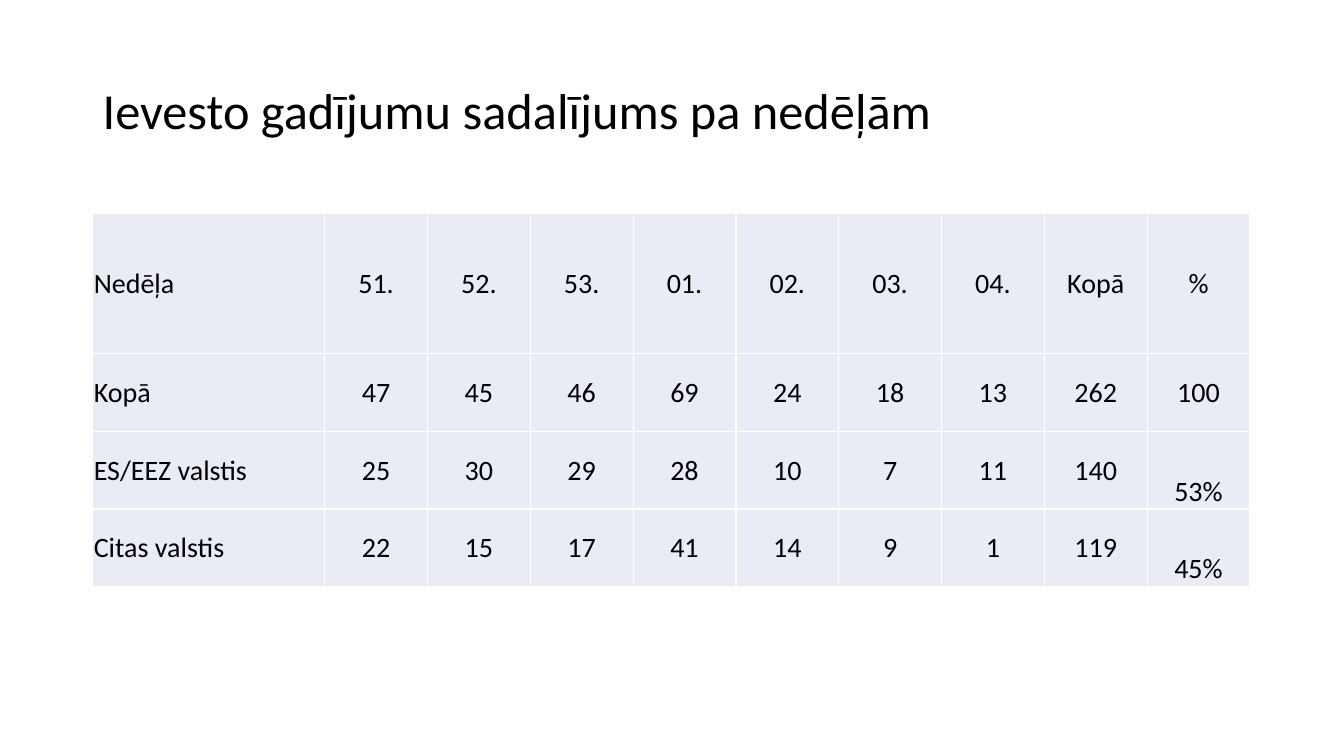
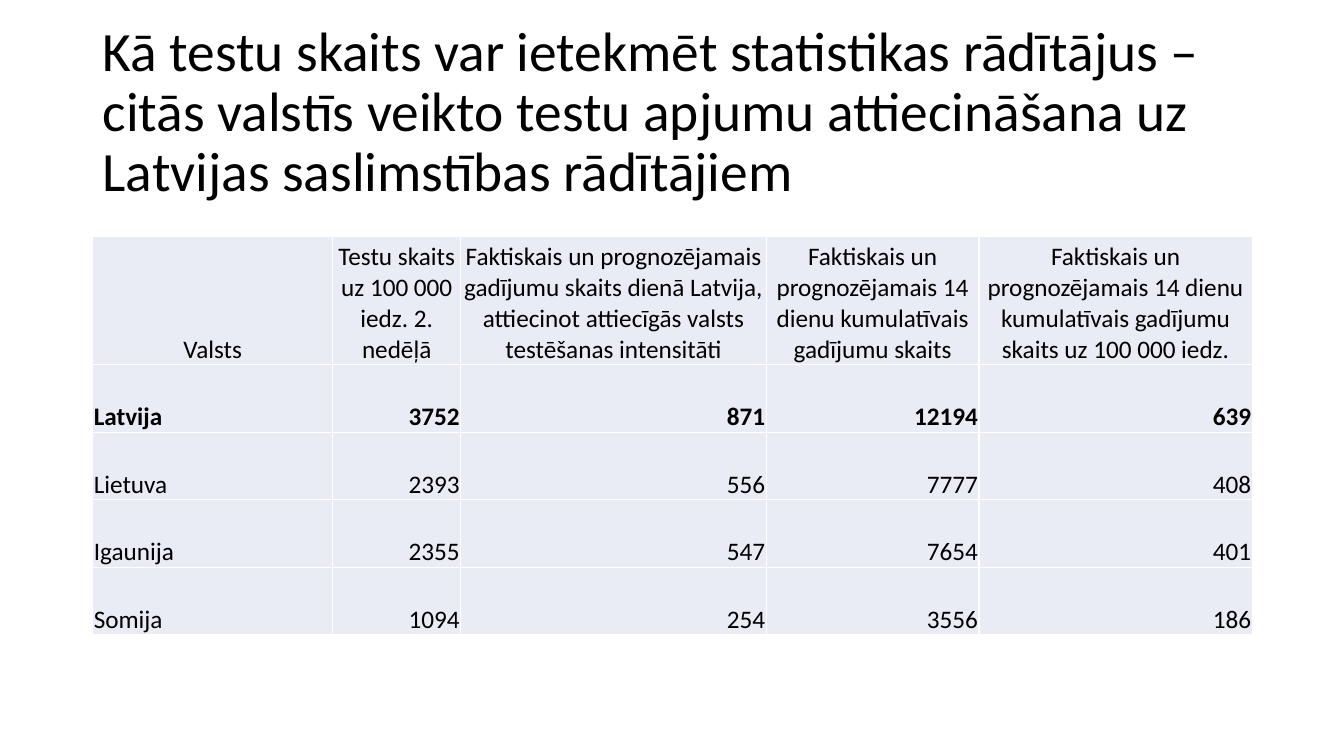
import pptx
import pptx.util
import pptx.dml.color
import pptx.enum.text
import pptx.oxml
import pptx.oxml.ns

Inches = pptx.util.Inches
Align = pptx.enum.text.PP_ALIGN
Anchor = pptx.enum.text.MSO_ANCHOR

FONT = "Calibri"
COLORS = {"text": "000000", "cell": "E9EBF5", "line": "FFFFFF"}
LEFT = 0.92


def style(para, size, bold=False):
    for run in para.runs:
        run.font.name = FONT
        run.font.size = pptx.util.Pt(size)
        run.font.bold = bold
        run.font.color.rgb = pptx.dml.color.RGBColor.from_string(COLORS["text"])


def border(cell):
    props = cell._tc.get_or_add_tcPr()
    for index, side in enumerate(("lnL", "lnR", "lnT", "lnB")):
        line = pptx.oxml.parse_xml(
            f'<a:{side} {pptx.oxml.ns.nsdecls("a")} w="12700"><a:solidFill>'
            f'<a:srgbClr val="{COLORS["line"]}"/></a:solidFill></a:{side}>')
        props.insert(index, line)


# Content of each slide
pages = [
    {
        "title": "Ievesto gadījumu sadalījums pa nedēļām",
        "title_size": 36, "size": 20, "top": 2.12,
        "cols": [2.3] + [1.02] * 9,
        "rows": [1.39] + [0.77] * 3,
        "head": Align.CENTER, "body": Align.CENTER, "corner": Align.LEFT,
        "anchor": Anchor.MIDDLE, "low": ["53%", "45%"], "bold": None,
        "data": [
            ["Nedēļa", "51.", "52.", "53.", "01.", "02.", "03.", "04.", "Kopā", "%"],
            ["Kopā", 47, 45, 46, 69, 24, 18, 13, 262, 100],
            ["ES/EEZ valstis", 25, 30, 29, 28, 10, 7, 11, 140, "53%"],
            ["Citas valstis", 22, 15, 17, 41, 14, 9, 1, 119, "45%"],
        ],
    },
    {
        "title": "Kā testu skaits var ietekmēt statistikas rādītājus – citās valstīs "
                 "veikto testu apjumu attiecināšana uz Latvijas saslimstības rādītājiem",
        "title_size": 39.6, "size": 18, "top": 2.35,
        "cols": [2.38, 1.27, 3.03, 2.11, 2.71],
        "rows": [1.27] + [0.67] * 4,
        "head": Align.CENTER, "body": Align.RIGHT, "corner": Align.CENTER,
        "anchor": Anchor.BOTTOM, "low": [], "bold": "Latvija",
        "data": [
            ["Valsts",
             "Testu skaits uz 100 000 iedz. 2. nedēļā",
             "Faktiskais un prognozējamais gadījumu skaits dienā Latvija, "
             "attiecinot attiecīgās valsts testēšanas intensitāti",
             "Faktiskais un prognozējamais 14 dienu kumulatīvais gadījumu skaits",
             "Faktiskais un prognozējamais 14 dienu kumulatīvais gadījumu skaits "
             "uz 100 000 iedz."],
            ["Latvija", 3752, 871, 12194, 639],
            ["Lietuva", 2393, 556, 7777, 408],
            ["Igaunija", 2355, 547, 7654, 401],
            ["Somija", 1094, 254, 3556, 186],
        ],
    },
]

deck = pptx.Presentation()
deck.slide_width = Inches(13.33)
deck.slide_height = Inches(7.5)

for page in pages:
    slide = deck.slides.add_slide(deck.slide_layouts[6])

    # Title
    box = slide.shapes.add_textbox(Inches(LEFT), Inches(0.4), Inches(11.5), Inches(1.45))
    frame = box.text_frame
    frame.word_wrap = True
    frame.vertical_anchor = Anchor.MIDDLE
    frame.text = page["title"]
    frame.paragraphs[0].line_spacing = 0.9
    style(frame.paragraphs[0], page["title_size"])

    # Table grid
    cols, rows = page["cols"], page["rows"]
    table = slide.shapes.add_table(
        len(rows), len(cols), Inches(LEFT), Inches(page["top"]),
        Inches(sum(cols)), Inches(sum(rows))).table
    for col, width in zip(table.columns, cols):
        col.width = Inches(width)
    for row, height in zip(table.rows, rows):
        row.height = Inches(height)

    # Table cells
    for r, values in enumerate(page["data"]):
        for c, value in enumerate(values):
            cell = table.cell(r, c)
            cell.text_frame.text = str(value)
            cell.margin_left = cell.margin_right = cell.margin_top = Inches(0.01)
            cell.margin_bottom = 0
            cell.vertical_anchor = Anchor.BOTTOM if value in page["low"] else page["anchor"]
            cell.fill.solid()
            cell.fill.fore_color.rgb = pptx.dml.color.RGBColor.from_string(COLORS["cell"])
            border(cell)
            para = cell.text_frame.paragraphs[0]
            if c == 0:
                para.alignment = Align.LEFT if r else page["corner"]
            else:
                para.alignment = page["body"] if r else page["head"]
            style(para, page["size"], values[0] == page["bold"])

deck.save("out.pptx")
